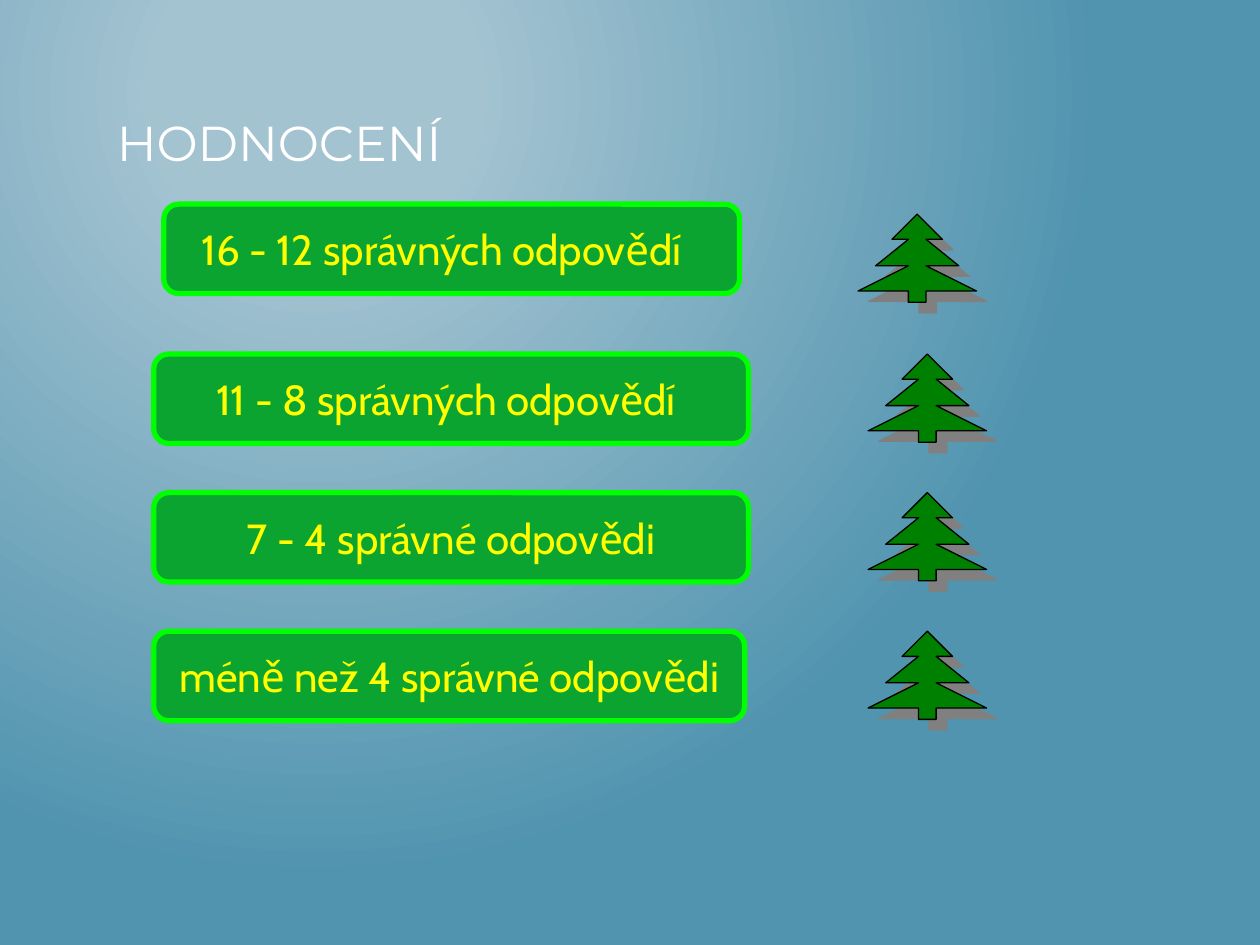
from lxml import etree
from pptx import Presentation
from pptx.dml.color import RGBColor
from pptx.enum.shapes import MSO_SHAPE
from pptx.enum.text import MSO_ANCHOR, PP_ALIGN
from pptx.oxml import parse_xml
from pptx.oxml.ns import nsdecls, qn
from pptx.util import Inches, Pt

ROUNDED = MSO_SHAPE.ROUNDED_RECTANGLE
TOP, MIDDLE = MSO_ANCHOR.TOP, MSO_ANCHOR.MIDDLE
LEFT, CENTER = PP_ALIGN.LEFT, PP_ALIGN.CENTER

BAR_HEIGHT = 0.71
TREE_WIDTH = 0.94
TREE_RIGHT_SIDE = [(0.67, 0.2), (0.54, 0.2), (0.8, 0.41), (0.54, 0.41),
                   (0.94, 0.61), (0.54, 0.61), (0.54, 0.7)]
TREE_LEFT_SIDE = [(TREE_WIDTH - x, y) for x, y in reversed(TREE_RIGHT_SIDE)]

ROW_TOPS = [1.62] + [2.81 + 1.1 * step for step in range(3)]
ROWS = [
    ("16 - 12 správných odpovědí", 1.3, 4.57, 0.26, 6.81, 0.08),
    ("11 - 8 správných odpovědí", 1.22, 4.72, 0.18, 6.89, 0),
    ("7 - 4 správné odpovědi", 1.22, 4.72, 0.1, 6.89, 0),
    ("méně než 4 správné odpovědi", 1.22, 4.69, 0.1, 6.89, 0),
]


def color(value):
    return RGBColor.from_string(value)


def paint(shape, fill, line, width):
    shape.shadow.inherit = False
    shape.fill.solid()
    shape.fill.fore_color.rgb = color(fill)
    shape.line.color.rgb = color(line)
    shape.line.width = Pt(width)


def write(shape, text, font, size, ink, align, anchor):
    frame = shape.text_frame
    frame.word_wrap = True
    frame.vertical_anchor = anchor
    frame.text = text
    para = frame.paragraphs[0]
    para.alignment = align
    span = para.runs[0]
    span.font.name = font
    span.font.size = Pt(size)
    span.font.color.rgb = color(ink)


def add_background(page):
    page._element.cSld.insert(0, parse_xml(
        f'<p:bg {nsdecls("p", "a")}><p:bgPr><a:gradFill rotWithShape="1"><a:gsLst>'
        '<a:gs pos="20000"><a:srgbClr val="A3C3D1"/></a:gs>'
        '<a:gs pos="100000"><a:srgbClr val="5194AF"/></a:gs></a:gsLst>'
        '<a:path path="circle"><a:fillToRect l="50000" t="20000" r="100000" b="100000"/>'
        '</a:path></a:gradFill><a:effectLst/></p:bgPr></p:bg>'))


def add_title(page, left, top, width, height):
    box = page.shapes.add_textbox(Inches(left), Inches(top), Inches(width), Inches(height))
    write(box, "HODNOCENÍ", "Montserrat", 28, "FFFFFF", LEFT, TOP)


def add_score_bar(page, text, left, top, width, right_margin):
    box = page.shapes.add_shape(
        ROUNDED, Inches(left), Inches(top), Inches(width), Inches(BAR_HEIGHT))
    paint(box, "0CA430", "00FF00", 3)
    write(box, text, "Cabin", 24, "FFFF00", CENTER, MIDDLE)
    box.text_frame.margin_right = Inches(right_margin)


def add_tree(page, left, top):
    def place(x, y):
        return Inches(left + x), Inches(top + y)

    builder = page.shapes.build_freeform(*place(TREE_WIDTH / 2, 0))
    builder.add_line_segments([place(x, y) for x, y in TREE_RIGHT_SIDE + TREE_LEFT_SIDE])
    tree = builder.convert_to_shape()
    paint(tree, "008000", "000000", 0.75)
    effects = tree._element.spPr.find(qn("a:effectLst"))
    shadow = etree.SubElement(effects, qn("a:outerShdw"), dist=str(Pt(8.5)),
                              dir="2700000", algn="ctr", rotWithShape="0")
    etree.SubElement(shadow, qn("a:srgbClr"), val="808080")


def main():
    deck = Presentation()
    deck.slide_width, deck.slide_height = Inches(10), Inches(7.5)
    page = deck.slides.add_slide(deck.slide_layouts[6])
    add_background(page)
    add_title(page, 0.83, 0.84, 3.13, 1)
    for top, (text, left, width, right_margin, tree_left, tree_drop) in zip(ROW_TOPS, ROWS):
        add_score_bar(page, text, left, top, width, right_margin)
        add_tree(page, tree_left, top + tree_drop)
    deck.save("out.pptx")


if __name__ == "__main__":
    main()
